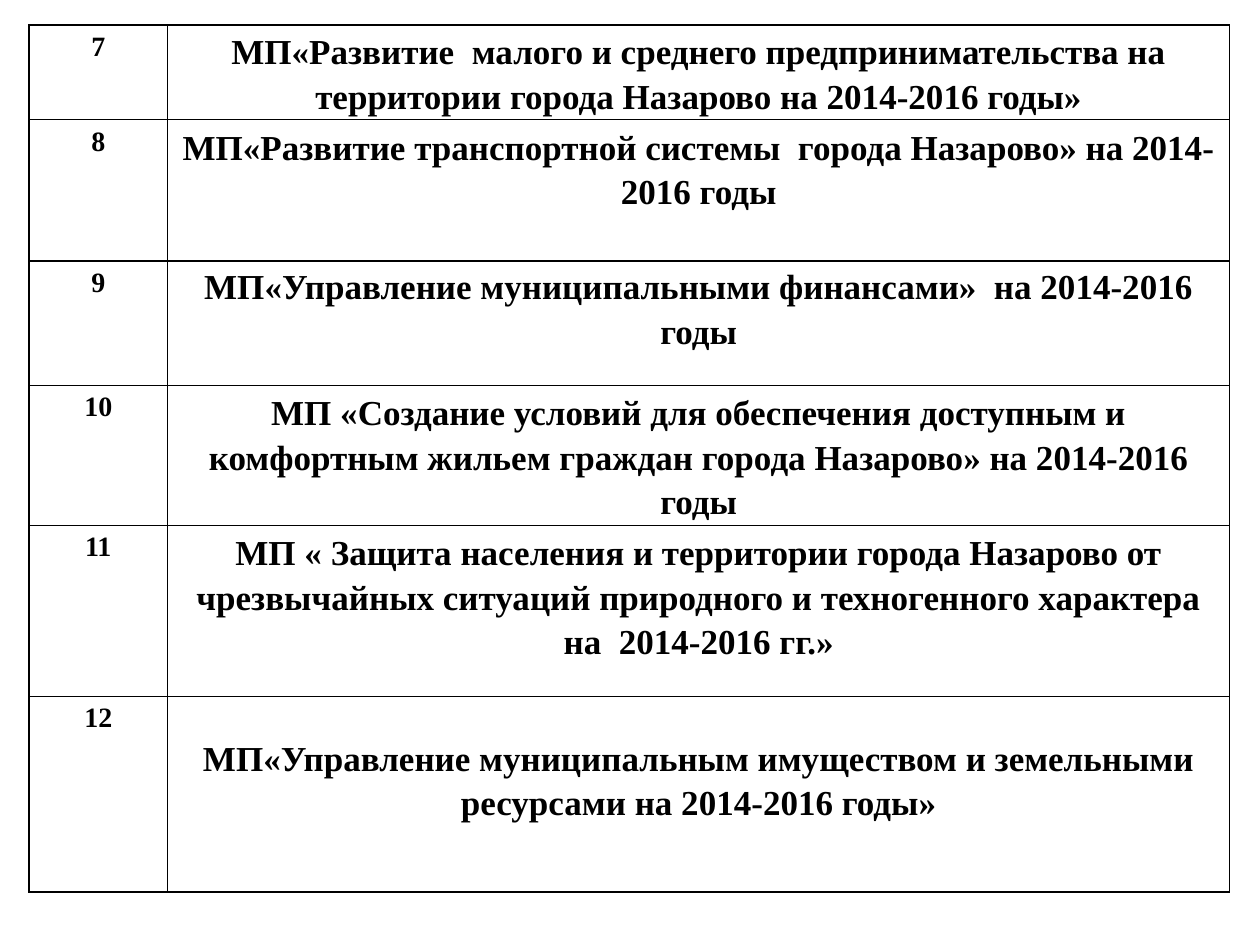
"""Build a slide with a numbered table of municipal programmes."""
from lxml import etree
from pptx import Presentation
from pptx.dml.color import RGBColor
from pptx.enum.text import MSO_ANCHOR, PP_ALIGN
from pptx.oxml.ns import qn
from pptx.util import Inches, Pt

CENTER = PP_ALIGN.CENTER
TOP, MIDDLE = MSO_ANCHOR.TOP, MSO_ANCHOR.MIDDLE
FONT, BLACK = "Times New Roman", "000000"
FIRST_NUMBER = 7
COLUMN_WIDTHS = (1.1, 8.43)
LEFT, TABLE_TOP = 0.23, 0.2

# programme, row height, space below the text
PROGRAMMES = [
    ("МП«Развитие  малого и среднего предпринимательства на территории города Назарово на 2014-2016 годы»", 0.75, 0),
    ("МП«Развитие транспортной системы  города Назарово» на 2014-2016 годы", 1.12, 0.36),
    ("МП«Управление муниципальными финансами»  на 2014-2016 годы", 0.99, 0.25),
    ("МП «Создание условий для обеспечения доступным и комфортным жильем граждан города Назарово» на 2014-2016 годы", 1.11, 0),
    ("МП « Защита населения и территории города Назарово от чрезвычайных ситуаций природного "
     "и техногенного характера на  2014-2016 гг.»", 1.36, 0.25),
    ("МП«Управление муниципальным имуществом и земельными ресурсами на 2014-2016 годы»", 1.55, 0.25),
]


def color(value):
    return RGBColor.from_string(value)


def add_borders(cell):
    properties = cell._tc.get_or_add_tcPr()
    for position, side in enumerate(("lnL", "lnR", "lnT", "lnB")):
        line = etree.Element(qn(f"a:{side}"), w=str(Pt(1)))
        fill = etree.SubElement(line, qn("a:solidFill"))
        etree.SubElement(fill, qn("a:srgbClr"), val=BLACK)
        properties.insert(position, line)


def fill_cell(cell, text, size, anchor):
    cell.text = text
    cell.vertical_anchor = anchor
    cell.fill.background()
    add_borders(cell)
    para = cell.text_frame.paragraphs[0]
    para.alignment = CENTER
    font = para.font
    font.name, font.size, font.bold = FONT, Pt(size), True
    font.color.rgb = color(BLACK)
    return para


def main():
    deck = Presentation()
    deck.slide_width, deck.slide_height = Inches(10), Inches(7.5)
    page = deck.slides.add_slide(deck.slide_layouts[6])
    height = sum(programme[1] for programme in PROGRAMMES)
    table = page.shapes.add_table(
        len(PROGRAMMES), len(COLUMN_WIDTHS), Inches(LEFT), Inches(TABLE_TOP),
        Inches(sum(COLUMN_WIDTHS)), Inches(height)).table
    table.first_row = table.horz_banding = False
    for column, width in zip(table.columns, COLUMN_WIDTHS):
        column.width = Inches(width)
    for index, (name, row_height, space_below) in enumerate(PROGRAMMES):
        table.rows[index].height = Inches(row_height)
        fill_cell(table.cell(index, 0), str(FIRST_NUMBER + index), 16, TOP)
        cell = table.cell(index, 1)
        cell.margin_left = cell.margin_right = Inches(0.07)
        cell.margin_top, cell.margin_bottom = 0, Inches(space_below)
        fill_cell(cell, name, 20, MIDDLE).line_spacing = 1.15
    deck.save("out.pptx")


if __name__ == "__main__":
    main()
